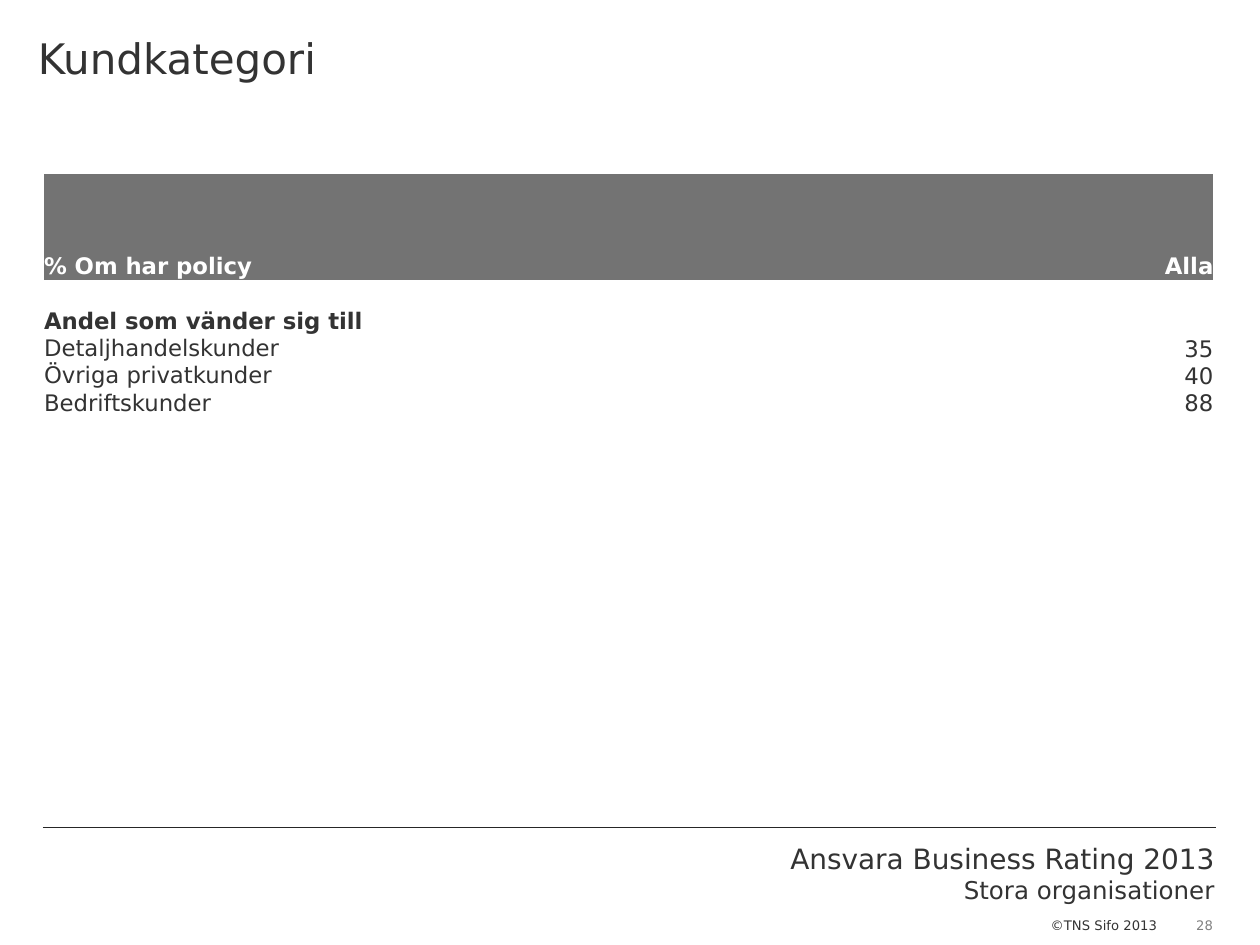
from pptx import Presentation
from pptx.dml.color import RGBColor
from pptx.enum.shapes import MSO_CONNECTOR
from pptx.enum.text import MSO_ANCHOR, PP_ALIGN
from pptx.oxml.ns import qn
from pptx.util import Inches, Pt
from lxml.etree import SubElement

INK = {"text": "333333", "rule": "262626", "head": "737373",
       "white": "FFFFFF", "page": "808080"}
LEFT, MID, RIGHT = PP_ALIGN.LEFT, PP_ALIGN.CENTER, PP_ALIGN.RIGHT
PLAIN = "{2D5ABB26-0587-4C30-8999-92F81FD0307C}"


class Deck:
    """Hold the style and the current slide."""

    font = "DejaVu Sans"

    def __init__(self, wide, high):
        self.prs = Presentation()
        self.prs.slide_width = Inches(wide)
        self.prs.slide_height = Inches(high)
        self.slide = self.prs.slides.add_slide(self.prs.slide_layouts[6])

    def color(self, name):
        return RGBColor.from_string(INK[name])

    def pad(self, item, sides):
        names = ("margin_left", "margin_top", "margin_right", "margin_bottom")
        for name, size in zip(names, sides):
            setattr(item, name, Inches(size))

    def style(self, para, size, ink="text", align=LEFT, bold=False):
        para.alignment = align
        for run in para.runs:
            font = run.font
            font.name, font.size, font.bold = self.font, Pt(size), bold
            font.color.rgb = self.color(ink)

    def text(self, box, lines, sides=(0.1, 0.05, 0.1, 0.05), ink="text",
             align=LEFT, wrap=True):
        frame = self.slide.shapes.add_textbox(*map(Inches, box)).text_frame
        frame.word_wrap = wrap
        self.pad(frame, sides)
        frame.text = "\n".join(line for line, _ in lines)
        for para, (_, size) in zip(frame.paragraphs, lines):
            self.style(para, size, ink, align)

    def rule(self, left, right, top):
        line = self.slide.shapes.add_connector(
            MSO_CONNECTOR.STRAIGHT, Inches(left), Inches(top),
            Inches(right), Inches(top))
        line.line.color.rgb = self.color("rule")
        line.line.width = Pt(0.75)
        SubElement(line._element.spPr, qn("a:effectLst"))

    def table(self, left, top, cols, highs, rows, size):
        frame = self.slide.shapes.add_table(
            len(highs), len(cols), Inches(left), Inches(top),
            Inches(sum(cols)), Inches(sum(highs)))
        grid = frame.table
        grid._tbl.tblPr.find(qn("a:tableStyleId")).text = PLAIN
        grid.first_row = grid.horz_banding = False
        for col, wide in zip(grid.columns, cols):
            col.width = Inches(wide)
        last = len(cols) - 1
        for i, (label, value) in enumerate(rows):
            grid.rows[i].height = Inches(highs[i])
            for j, cell in enumerate(grid.rows[i].cells):
                words = {0: label, last: value}.get(j, "")
                self.cell(cell, words, size, i == 0, i < 3, j == last)

    def cell(self, cell, words, size, head, bold, end):
        self.pad(cell, (0, 0, 0, 0))
        cell.vertical_anchor = MSO_ANCHOR.BOTTOM
        if head:
            cell.fill.solid()
            cell.fill.fore_color.rgb = self.color("head")
        else:
            cell.fill.background()
        para = cell.text_frame.paragraphs[0]
        para.text = words
        if not words:
            SubElement(para._p, qn("a:endParaRPr"), sz=str(size * 100))
            return
        self.style(para, size, "white" if head else "text",
                   RIGHT if end else LEFT, bold)
        if end and not head:
            para.line_spacing = 0.9


def main():
    deck = Deck(10, 7.5)
    deck.text((9.47, 7.28, 0.18, 0.13), [("28", 7.5)], (0, 0, 0, 0),
              "page", MID, False)
    deck.rule(0.34, 9.65, 6.57)
    deck.text((5.16, 6.63, 4.58, 0.61),
              [("Ansvara Business Rating 2013", 16),
               ("Stora organisationer", 14)], align=RIGHT)
    deck.text((8.24, 7.23, 1.1, 0.23), [("©TNS Sifo 2013", 7.5)])
    deck.text((0, 0, 10, 1.16), [("Kundkategori", 24)], (0.3, 0.26, 0.3, 0))
    rows = [("% Om har policy", "Alla"), ("", ""),
            ("Andel som vänder sig till", ""), ("Detaljhandelskunder", "35"),
            ("Övriga privatkunder", "40"), ("Bedriftskunder", "88")]
    deck.table(0.35, 1.38, [3.7, 0.47, 1.15, 1.03, 1.03, 1.03, 0.87],
               [0.84] + [0.21] * 5, rows, 13)
    deck.prs.save("out.pptx")


if __name__ == "__main__":
    main()
